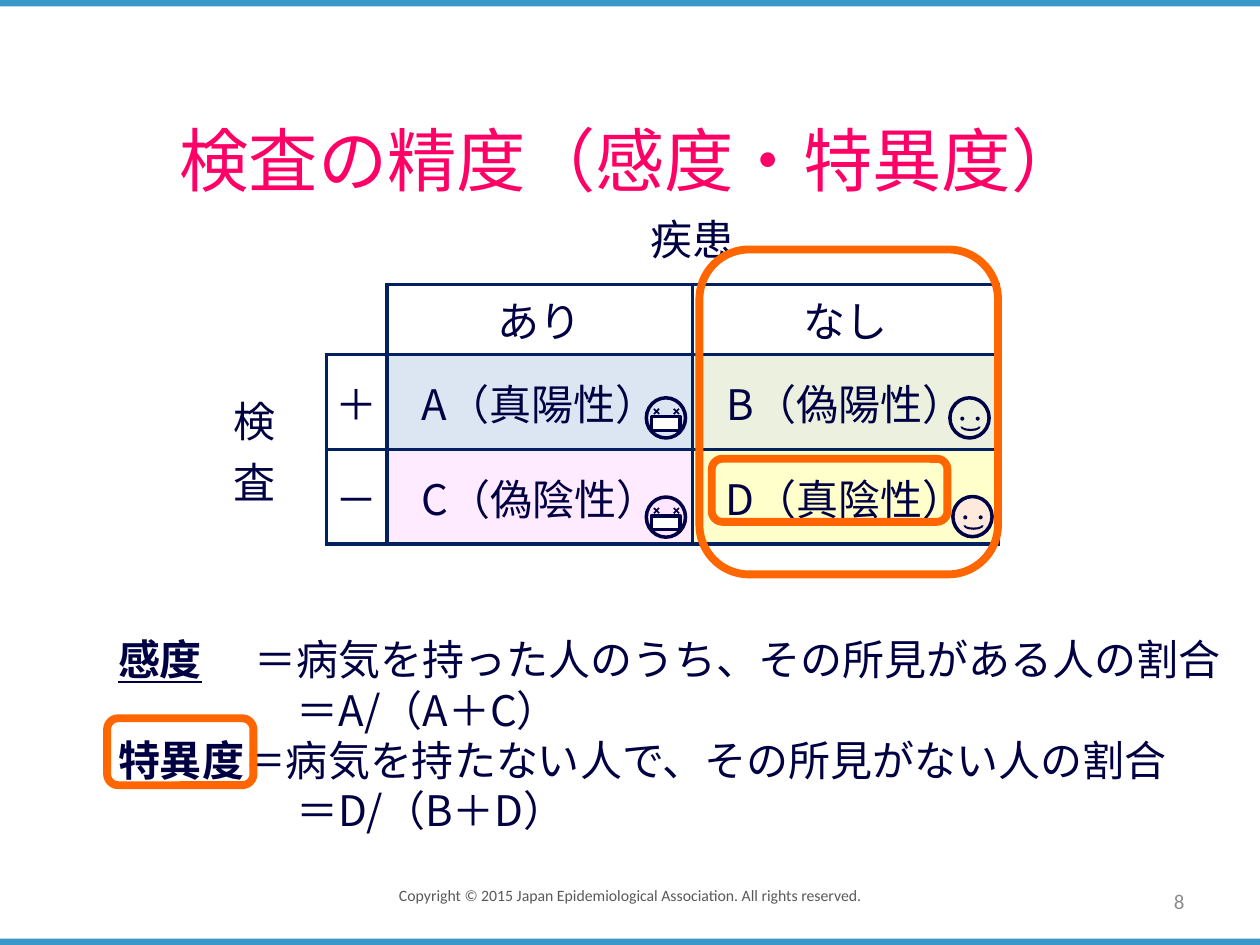
from dataclasses import dataclass
from typing import Optional

from lxml.etree import SubElement
from pptx import Presentation
from pptx.dml.color import RGBColor
from pptx.enum.shapes import MSO_SHAPE as Preset
from pptx.enum.text import MSO_ANCHOR as Anchor, PP_ALIGN as Align
from pptx.oxml import parse_xml
from pptx.oxml.ns import nsdecls, qn
from pptx.util import Cm, Pt

GOTHIC, LATIN = "Noto Sans CJK JP", "Calibri"
NAVY, INK, BORDER, ORANGE = "000042", "000046", "002060", "FF6600"
NO_STYLE = "{2D5ABB26-0587-4C30-8999-92F81FD0307C}"


@dataclass
class Box:
    left: float
    top: float
    width: float
    height: float

    def lengths(self) -> list:
        return [Cm(v) for v in (self.left, self.top, self.width, self.height)]


@dataclass
class Entry:
    row: int
    column: int
    text: str
    fill: Optional[str] = None
    bordered: bool = True


@dataclass
class Face:
    left: float
    top: float
    fill: str
    masked: bool


@dataclass
class Definition:
    term: str
    meaning: str
    formula: str


ENTRIES = [
    Entry(0, 2, "疾患", bordered=False),
    Entry(1, 2, "あり"),
    Entry(1, 3, "なし"),
    Entry(2, 0, "検査", bordered=False),
    Entry(2, 1, "＋"),
    Entry(2, 2, "A（真陽性）", "DCE6F2"),
    Entry(2, 3, "B（偽陽性）", "EBF1DE"),
    Entry(3, 1, "－"),
    Entry(3, 2, "C（偽陰性）", "FFEBFF"),
    Entry(3, 3, "D（真陰性）", "FFFFCC"),
]
FACES = [
    Face(13.03, 8.02, "DCE6F2", True),
    Face(19.15, 8.02, "EBF1DE", False),
    Face(13.03, 10.02, "FFE5FF", True),
    Face(19.21, 10.01, "FDEADA", False),
]
DEFINITIONS = [
    Definition("感度", "\t＝病気を持った人のうち、その所見がある人の割合", "＝A/（A＋C）"),
    Definition("特異度", "＝病気を持たない人で、その所見がない人の割合", "＝D/（B＋D）"),
]
HIGHLIGHTS = [Box(14.1, 5.03, 6.02, 6.55), Box(2.16, 14.48, 2.95, 1.35),
              Box(14.35, 9.25, 4.75, 1.27)]


def color(value: str) -> RGBColor:
    return RGBColor.from_string(value)


def set_font(paragraph, size: float, tint: str, name: str = GOTHIC) -> None:
    font = paragraph.font
    font.size, font.name = Pt(size), name
    font.color.rgb = color(tint)
    for run in paragraph.runs:
        properties = run._r.get_or_add_rPr()
        SubElement(properties, qn("a:ea")).set("typeface", name)


def add_preset(shapes, preset, box: Box, fill: Optional[str] = None,
               line: Optional[str] = None, weight: float = 2):
    shape = shapes.add_shape(preset, *box.lengths())
    shape.shadow.inherit = False
    if fill:
        shape.fill.solid()
        shape.fill.fore_color.rgb = color(fill)
    else:
        shape.fill.background()
    if line:
        shape.line.color.rgb = color(line)
        shape.line.width = Pt(weight)
    else:
        shape.line.fill.background()
    return shape


def add_label(shapes, box: Box, text: str, size: float, tint: str, name: str, align) -> None:
    frame = shapes.add_textbox(*box.lengths()).text_frame
    frame.word_wrap = True
    frame.vertical_anchor = Anchor.MIDDLE
    label = frame.paragraphs[0]
    label.text, label.alignment = text, align
    set_font(label, size, tint, name)


def add_borders(cell) -> None:
    properties = cell._tc.get_or_add_tcPr()
    for index, side in enumerate("LRTB"):
        properties.insert(index, parse_xml(
            f'<a:ln{side} {nsdecls("a")} w="{Pt(2.25)}"><a:solidFill>'
            f'<a:srgbClr val="{BORDER}"/></a:solidFill></a:ln{side}>'))


def add_cross_table(shapes) -> None:
    frame = shapes.add_table(4, 4, *Box(4.53, 3.83, 15.59, 7.14).lengths())
    table = frame.table
    table._tbl.tblPr.find(qn("a:tableStyleId")).text = NO_STYLE
    table.first_row = table.horz_banding = False
    for column, width in zip(table.columns, (2.05, 1.22, 6.16, 6.16)):
        column.width = Cm(width)
    for row, height in zip(table.rows, (1.9, 1.42, 1.91, 1.91)):
        row.height = Cm(height)
    table.cell(0, 2).merge(table.cell(0, 3))
    table.cell(2, 0).merge(table.cell(3, 0))
    for cell in table.iter_cells():
        cell.fill.background()
    for entry in ENTRIES:
        cell = table.cell(entry.row, entry.column)
        cell.margin_left = cell.margin_right = Cm(0.18)
        cell.margin_top = cell.margin_bottom = Cm(0.1)
        cell.vertical_anchor = Anchor.MIDDLE
        if entry.fill:
            cell.fill.solid()
            cell.fill.fore_color.rgb = color(entry.fill)
        if entry.bordered:
            add_borders(cell)
        heading = cell.text_frame.paragraphs[0]
        heading.text = entry.text
        heading.alignment = Align.CENTER if entry.column else Align.LEFT
        set_font(heading, 24, NAVY)


def add_definitions(shapes) -> None:
    frame = shapes.add_textbox(*Box(2.13, 12.65, 23.04, 4.37).lengths()).text_frame
    frame.word_wrap = True
    lines = [frame.paragraphs[0]] + [frame.add_paragraph() for _ in range(3)]
    for definition, meaning, formula in zip(DEFINITIONS, lines[::2], lines[1::2]):
        term = meaning.add_run()
        term.text = definition.term
        term.font.bold = term.font.underline = True
        meaning.add_run().text = definition.meaning
        formula.text = definition.formula
        stops = SubElement(meaning._p.get_or_add_pPr(), qn("a:tabLst"))
        SubElement(stops, qn("a:tab"), pos=str(Cm(2.75)), algn="l")
        formula._p.get_or_add_pPr().set("marL", str(Cm(3.6)))
    for line in lines:
        set_font(line, 24, NAVY)


def add_face(shapes, face: Face) -> None:
    group = shapes.add_group_shape().shapes

    def part(preset, x: float, y: float, width: float, height: float, **paint):
        return add_preset(group, preset, Box(face.left + x, face.top + y, width, height), **paint)

    part(Preset.OVAL, 0, 0, 0.79, 0.81, fill=face.fill, line=INK)
    if face.masked:
        part(Preset.RECTANGLE, 0.1, 0.38, 0.58, 0.28, fill="FFFFFF", line=INK)
        for x in (0.13, 0.53):
            eye = part(Preset.CROSS, x, 0.2, 0.15, 0.15, fill=INK)
            eye.adjustments[0] = 0.39
            eye.rotation = 43.8
    else:
        for x in (0.21, 0.52):
            part(Preset.OVAL, x, 0.38, 0.08, 0.08, fill=INK)
        part(Preset.BLOCK_ARC, 0.21, 0.49, 0.41, 0.18, fill=INK).rotation = 180


def main() -> None:
    """Build the slide on test accuracy: sensitivity and specificity."""
    deck = Presentation()
    deck.slide_width, deck.slide_height = Cm(25.4), Cm(19.05)
    shapes = deck.slides.add_slide(deck.slide_layouts[6]).shapes
    for top in (0, 18.92):
        add_preset(shapes, Preset.RECTANGLE, Box(0, top, 25.4, 0.13), fill="3998C8")
    add_label(shapes, Box(7.3, 17.73, 10.8, 0.64),
              "Copyright © 2015 Japan Epidemiological Association. All rights reserved.",
              9, "595959", LATIN, Align.CENTER)
    add_label(shapes, Box(2.92, 2, 19.56, 2.39), "検査の精度（感度・特異度）",
              39.6, "FF0066", GOTHIC, Align.CENTER)
    add_cross_table(shapes)
    add_definitions(shapes)
    add_label(shapes, Box(18.21, 17.65, 5.92, 1.02), "8", 12, "8C8C8C", LATIN, Align.RIGHT)
    for box in HIGHLIGHTS:
        add_preset(shapes, Preset.ROUNDED_RECTANGLE, box, line=ORANGE, weight=4.5)
    for face in FACES:
        add_face(shapes, face)
    deck.save("out.pptx")


if __name__ == "__main__":
    main()
